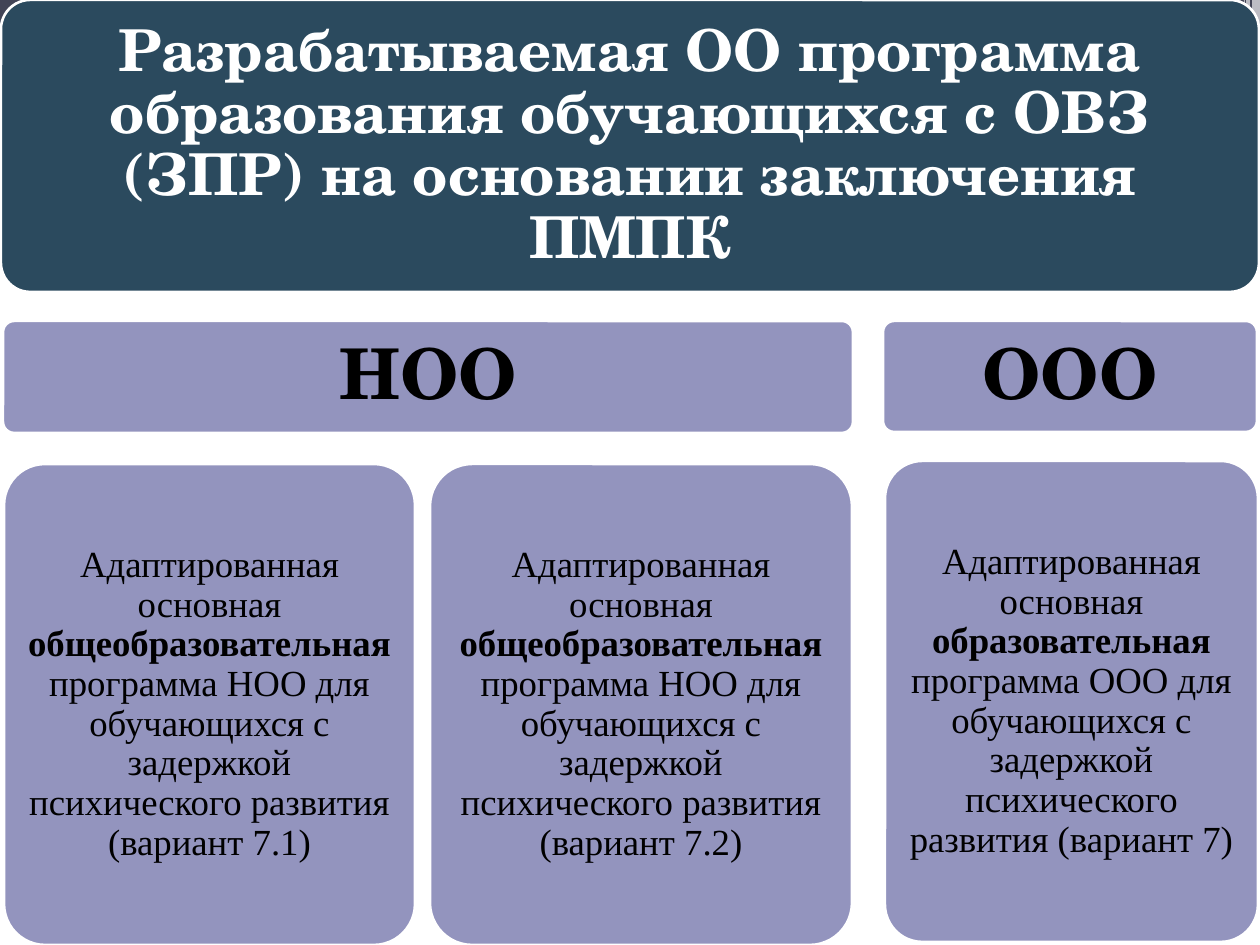
from dataclasses import dataclass

from lxml.etree import SubElement
from pptx import Presentation
from pptx.dml.color import RGBColor
from pptx.enum.shapes import MSO_SHAPE as Shape
from pptx.enum.text import MSO_ANCHOR as Anchor, PP_ALIGN as Align
from pptx.oxml.ns import qn
from pptx.util import Emu, Pt

EMU_PER_PX = 914400 / 126
WHITE = RGBColor(0xFF, 0xFF, 0xFF)
BLACK = RGBColor(0, 0, 0)
TEAL = RGBColor(0x43, 0x80, 0x86)
SLATE = RGBColor(0x42, 0x44, 0x56)
NAVY = RGBColor(0x2B, 0x4A, 0x5E)
LILAC = RGBColor(0x93, 0x94, 0xBE)
HEADING_FONT = "TeX Gyre Schola"
BODY_FONT = "Times New Roman"


@dataclass(frozen=True)
class Box:
    x: int
    y: int
    w: int
    h: int


@dataclass(frozen=True)
class Band:
    box: Box
    color: RGBColor
    opacity: int = 100


@dataclass(frozen=True)
class Style:
    fill: RGBColor
    ink: RGBColor
    font: str
    size: int
    inset: int


@dataclass(frozen=True)
class Run:
    text: str
    bold: bool = False


@dataclass(frozen=True)
class Panel:
    box: Box
    style: Style
    runs: tuple[Run, ...]


TITLE = Style(NAVY, WHITE, HEADING_FONT, 33, 18)
LEVEL = Style(LILAC, BLACK, HEADING_FONT, 40, 21)
PROGRAM = Style(LILAC, BLACK, BODY_FONT, 21, 11)

BANDS = (
    Band(Box(0, 50, 1260, 11), TEAL, 50),
    Band(Box(0, 0, 1260, 43), SLATE),
    Band(Box(0, 43, 1260, 13), TEAL),
    Band(Box(746, 49, 514, 13), TEAL),
    Band(Box(746, 60, 514, 25), TEAL, 50),
    Band(Box(1252, 0, 8, 86), WHITE, 65),
    Band(Box(1246, 0, 4, 86), WHITE, 65),
    Band(Box(1244, 0, 1, 86), WHITE, 60),
    Band(Box(1237, 0, 4, 86), WHITE, 40),
    Band(Box(1229, 0, 8, 81), WHITE, 20),
    Band(Box(1222, 0, 1, 81), WHITE, 30),
)


def program_runs(kind: str, level: str, variant: str) -> tuple[Run, ...]:
    return (
        Run("Адаптированная основная "),
        Run(kind, bold=True),
        Run(f" программа {level} для обучающихся с задержкой "
            f"психического развития (вариант {variant})"),
    )


PANELS = (
    Panel(Box(1, 0, 1258, 292), TITLE, (
        Run("Разрабатываемая ОО программа образования обучающихся с ОВЗ (ЗПР) "
            "на основании заключения ПМПК", bold=True),)),
    Panel(Box(3, 321, 850, 112), LEVEL, (Run("НОО", bold=True),)),
    Panel(Box(4, 464, 411, 481), PROGRAM,
          program_runs("общеобразовательная", "НОО", "7.1")),
    Panel(Box(430, 464, 422, 481), PROGRAM,
          program_runs("общеобразовательная", "НОО", "7.2")),
    Panel(Box(883, 321, 374, 111), LEVEL, (Run("ООО", bold=True),)),
    Panel(Box(885, 461, 373, 481), PROGRAM,
          program_runs("образовательная", "ООО", "7")),
)


def px(n: int) -> Emu:
    return Emu(round(n * EMU_PER_PX))


def add_filled(s, kind: Shape, box: Box, color: RGBColor):
    sp = s.shapes.add_shape(kind, px(box.x), px(box.y), px(box.w), px(box.h))
    sp.shadow.inherit = False
    sp.fill.solid()
    sp.fill.fore_color.rgb = color
    return sp


def add_band(s, band: Band) -> None:
    sp = add_filled(s, Shape.RECTANGLE, band.box, band.color)
    sp.line.fill.background()
    if band.opacity < 100:
        color = sp.fill._xPr.find(qn("a:solidFill"))[0]
        SubElement(color, qn("a:alpha"), val=str(band.opacity * 1000))


def add_panel(s, panel: Panel) -> None:
    style = panel.style
    sp = add_filled(s, Shape.ROUNDED_RECTANGLE, panel.box, style.fill)
    sp.adjustments[0] = 0.1
    sp.line.color.rgb = WHITE
    sp.line.width = Pt(1.5)
    tf = sp.text_frame
    tf.word_wrap = True
    tf.vertical_anchor = Anchor.MIDDLE
    tf.margin_left = tf.margin_right = px(style.inset)
    tf.margin_top = tf.margin_bottom = px(style.inset)
    p = tf.paragraphs[0]
    p.alignment = Align.CENTER
    p.line_spacing = 0.9
    for run in panel.runs:
        r = p.add_run()
        r.text = run.text
        r.font.name = style.font
        r.font.size = Pt(style.size)
        r.font.bold = run.bold
        r.font.color.rgb = style.ink


def main() -> None:
    prs = Presentation()
    prs.slide_width, prs.slide_height = px(1260), px(945)
    s = prs.slides.add_slide(prs.slide_layouts[6])
    for band in BANDS:
        add_band(s, band)
    for panel in PANELS:
        add_panel(s, panel)
    prs.save("out.pptx")


if __name__ == "__main__":
    main()
